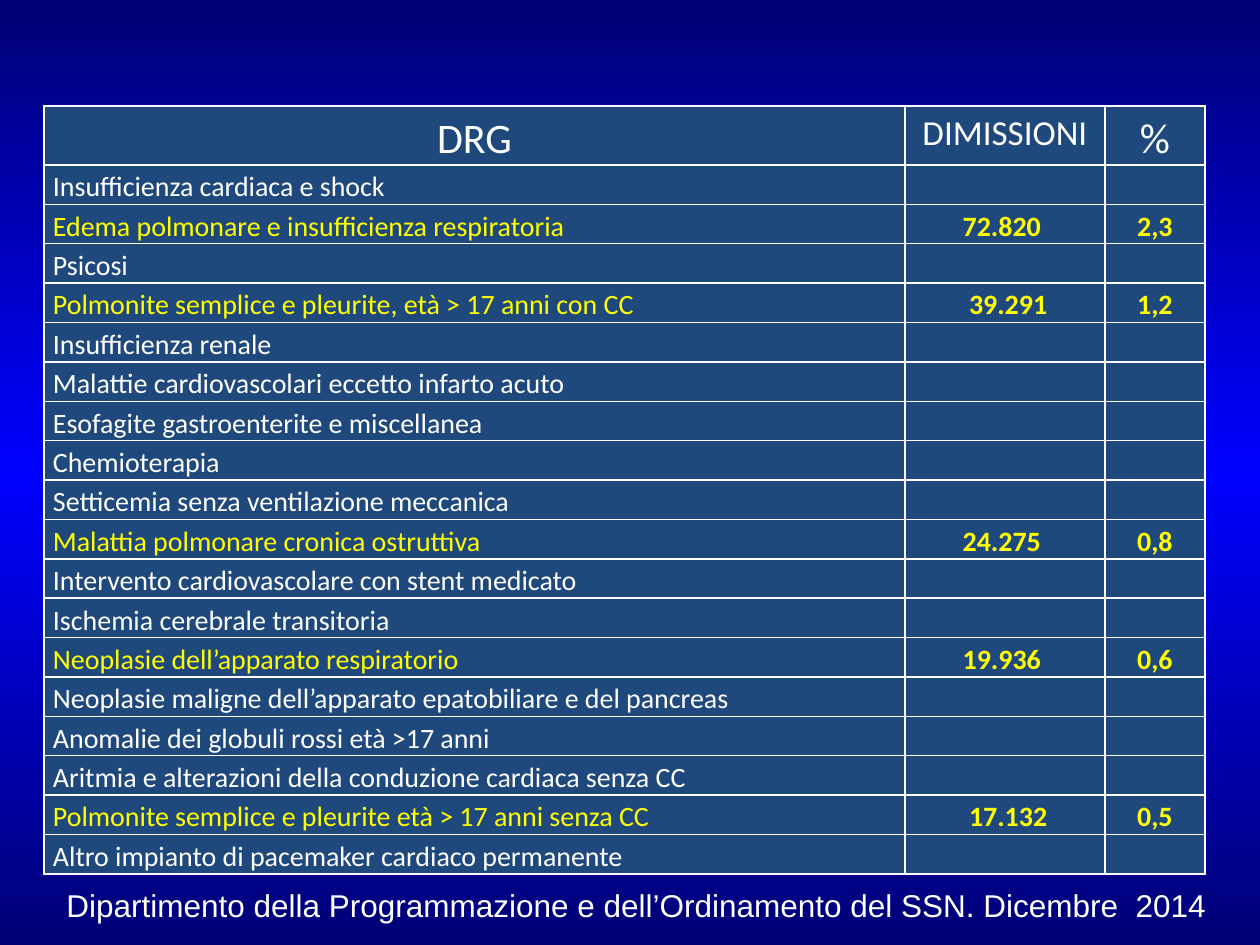
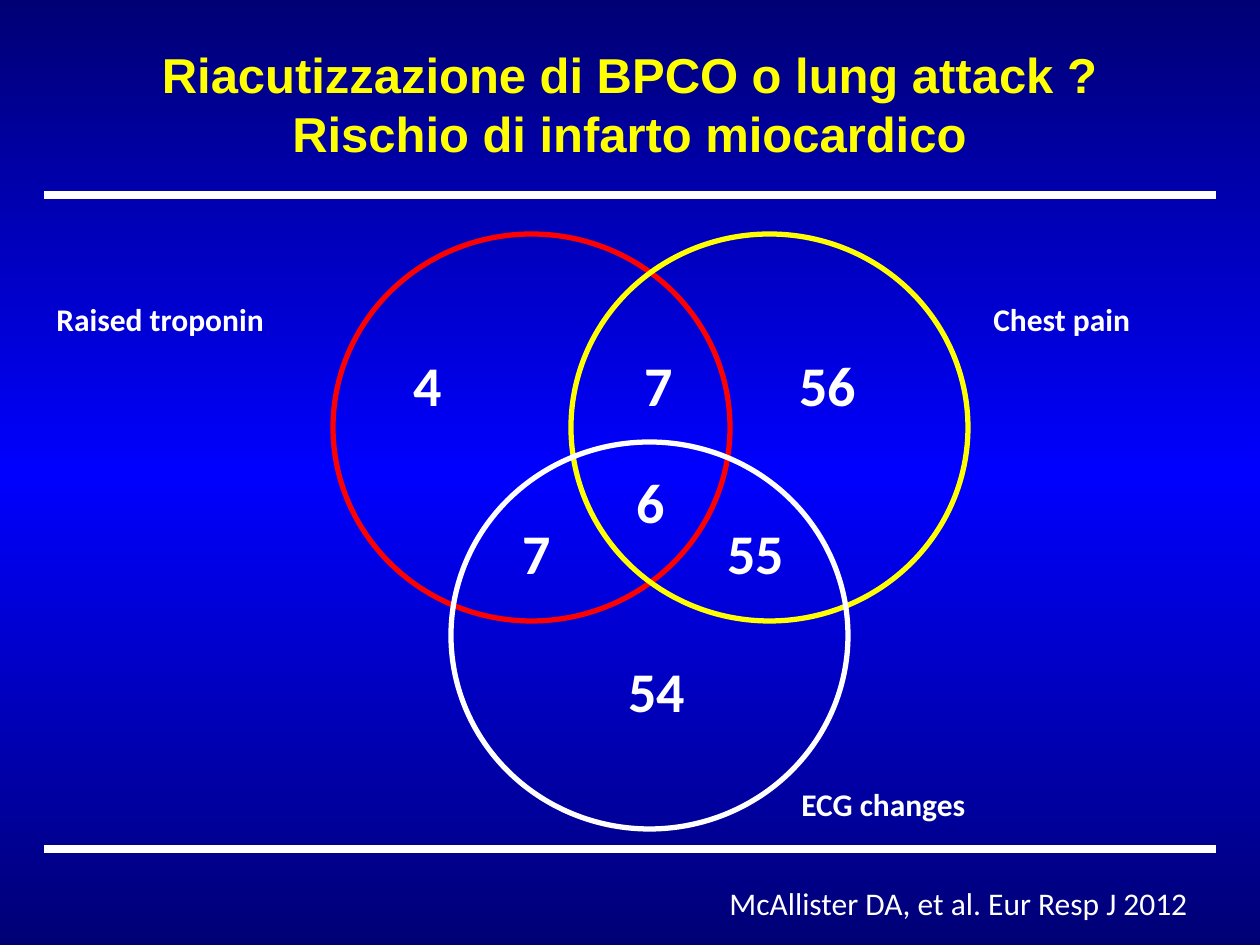
from lxml import etree
from pptx import Presentation
from pptx.dml.color import RGBColor
from pptx.enum.shapes import MSO_CONNECTOR, MSO_SHAPE
from pptx.enum.text import MSO_ANCHOR, PP_ALIGN
from pptx.oxml.ns import qn
from pptx.util import Emu, Pt

LEFT, CENTER, JUSTIFY = PP_ALIGN.LEFT, PP_ALIGN.CENTER, PP_ALIGN.JUSTIFY
MIDDLE = MSO_ANCHOR.MIDDLE
OVAL, STRAIGHT = MSO_SHAPE.OVAL, MSO_CONNECTOR.STRAIGHT
TITLE_ONLY, BLANK = 5, 6

COLORS = {
    "night": "000075",
    "blue": "0000FF",
    "cell": "1F497D",
    "white": "FFFFFF",
    "yellow": "FFFF00",
    "red": "FF0000",
}
GRADIENT = [(0, "night"), (50, "blue"), (100, "night")]

DRG_HEADINGS = [("DRG", 24), ("DIMISSIONI", 20), ("%", 24)]
DRG_ROWS = [
    ("Insufficienza cardiaca e shock",),
    ("Edema polmonare e insufficienza respiratoria", "72.820 ", "2,3"),
    ("Psicosi",),
    ("Polmonite semplice e pleurite, età > 17 anni con CC", " 39.291", "1,2"),
    ("Insufficienza renale",),
    ("Malattie cardiovascolari eccetto infarto acuto",),
    ("Esofagite gastroenterite e miscellanea",),
    ("Chemioterapia",),
    ("Setticemia senza ventilazione meccanica",),
    ("Malattia polmonare cronica ostruttiva", "24.275 ", "0,8"),
    ("Intervento cardiovascolare con stent medicato",),
    ("Ischemia cerebrale transitoria",),
    ("Neoplasie dell’apparato respiratorio", "19.936 ", "0,6"),
    ("Neoplasie maligne dell’apparato epatobiliare e del pancreas",),
    ("Anomalie dei globuli rossi età >17 anni",),
    ("Aritmia e alterazioni della conduzione cardiaca senza CC",),
    ("Polmonite semplice e pleurite età > 17 anni senza CC", " 17.132", "0,5"),
    ("Altro impianto di pacemaker cardiaco permanente",),
]
DRG_SOURCE = "Dipartimento della Programmazione e dell’Ordinamento del SSN. Dicembre  2014"

RISK_TITLE = ["Riacutizzazione di BPCO o lung attack ?", "Rischio di infarto miocardico"]
VENN_SETS = [
    ("Raised troponin", (44, 294, 234), (333, 234), "red"),
    ("Chest pain", (981, 294, 163), (571, 234), "yellow"),
    ("ECG changes", (789, 779, 190), (451, 442), "white"),
]
VENN_COUNTS = [
    ("4", 428, 384), ("7", 659, 384), ("56", 828, 384),
    ("6", 651, 501),
    ("7", 537, 552), ("55", 756, 552),
    ("54", 657, 690),
]
RISK_SOURCE = "McAllister DA, et al. Eur Resp J 2012"

SLIDE_W, SLIDE_H = 1260, 945
MARGIN = 44
COLUMN_WIDTHS = [861, 200, 100]
TABLE_TOP, HEADING_H, ROW_H = 106, 58, 39
LINE_H = 50
COUNT_W, COUNT_H = 84, 81
CIRCLE_W, CIRCLE_H = 397, 387
RULE_TOPS = [195, 849]


def px(length):
    return Emu(length * 7257)


def rgb(color):
    return RGBColor.from_string(COLORS[color])


def add_solid(parent, color):
    solid = etree.SubElement(parent, qn("a:solidFill"))
    etree.SubElement(solid, qn("a:srgbClr"), val=COLORS[color])


def paint_background(master):
    fill = master.background.fill
    fill.gradient()
    fill.gradient_angle = 270
    stops = master.element.find(".//" + qn("p:bgPr")).find(".//" + qn("a:gsLst"))
    for stop in list(stops):
        stops.remove(stop)
    for percent, color in GRADIENT:
        stop = etree.SubElement(stops, qn("a:gs"), pos=str(percent * 1000))
        etree.SubElement(stop, qn("a:srgbClr"), val=COLORS[color])


def write(paragraph, words, size, color="white", font="Calibri", bold=False, align=LEFT):
    paragraph.alignment = align
    run = paragraph.add_run()
    run.text = words
    run.font.name = font
    run.font.size = Pt(size)
    run.font.bold = bold
    run.font.color.rgb = rgb(color)


def add_label(slide, words, left, top, width, height=LINE_H, size=18, **style):
    box = slide.shapes.add_textbox(px(left), px(top), px(width), px(height))
    box.text_frame.word_wrap = False
    write(box.text_frame.paragraphs[0], words, size, **style)


def format_cell(cell):
    cell.margin_left = cell.margin_right = px(9)
    cell.margin_top = cell.margin_bottom = 0
    properties = cell._tc.get_or_add_tcPr()
    for side in ("lnL", "lnR", "lnT", "lnB"):
        border = etree.SubElement(properties, qn("a:" + side), w=str(Pt(1)))
        add_solid(border, "white")
    cell.fill.solid()
    cell.fill.fore_color.rgb = rgb("cell")


def fill_cell(cell, words, size, **style):
    paragraph = cell.text_frame.paragraphs[0]
    paragraph.line_spacing = 1.15
    write(paragraph, words, size, **style)


def build_drg_slide(prs):
    slide = prs.slides.add_slide(prs.slide_layouts[BLANK])
    table = slide.shapes.add_table(
        len(DRG_ROWS) + 1, len(COLUMN_WIDTHS), px(MARGIN), px(TABLE_TOP),
        px(sum(COLUMN_WIDTHS)), px(HEADING_H + ROW_H * len(DRG_ROWS))).table
    table.first_row = table.horz_banding = False
    for column, width in zip(table.columns, COLUMN_WIDTHS):
        column.width = px(width)
    for index, row in enumerate(table.rows):
        row.height = px(ROW_H if index else HEADING_H)
    for cell in table.iter_cells():
        format_cell(cell)
    for column, (heading, size) in enumerate(DRG_HEADINGS):
        fill_cell(table.cell(0, column), heading, size, align=CENTER)
    for row, entries in enumerate(DRG_ROWS, 1):
        color = "yellow" if len(entries) > 1 else "white"
        for column, words in enumerate(entries):
            fill_cell(table.cell(row, column), words, 16, color=color,
                      bold=column > 0, align=CENTER if column else JUSTIFY)
    add_label(slide, DRG_SOURCE, 54, 880, 1167, font="Arial")


def add_rule(slide, top):
    rule = slide.shapes.add_connector(
        STRAIGHT, px(MARGIN), px(top), px(SLIDE_W - MARGIN), px(top))
    rule.line.color.rgb = rgb("white")
    rule.line.width = Pt(4.5)
    etree.SubElement(rule._element.spPr, qn("a:effectLst"))


def add_circle(slide, left, top, color):
    circle = slide.shapes.add_shape(OVAL, px(left), px(top), px(CIRCLE_W), px(CIRCLE_H))
    circle.shadow.inherit = False
    circle.fill.background()
    circle.line.color.rgb = rgb(color)
    circle.line.width = Pt(3)


def build_risk_slide(prs):
    slide = prs.slides.add_slide(prs.slide_layouts[TITLE_ONLY])
    title = slide.shapes.title
    title.left, title.top, title.width, title.height = map(px, (MARGIN, 38, 1171, 131))
    frame = title.text_frame
    frame.vertical_anchor = MIDDLE
    for index, words in enumerate(RISK_TITLE):
        paragraph = frame.add_paragraph() if index else frame.paragraphs[0]
        write(paragraph, words, 28, "yellow", "Arial", True, CENTER)
    for top in RULE_TOPS:
        add_rule(slide, top)
    for name, label_place, circle_place, color in VENN_SETS:
        add_circle(slide, *circle_place, color)
        add_label(slide, name, *label_place, bold=True)
    for count, x, y in VENN_COUNTS:
        add_label(slide, count, x - COUNT_W // 2, y - COUNT_H // 2, COUNT_W, COUNT_H,
                  size=32, bold=True, align=CENTER)
    add_label(slide, RISK_SOURCE, 717, 878, 489)


def main():
    prs = Presentation()
    prs.slide_width, prs.slide_height = px(SLIDE_W), px(SLIDE_H)
    paint_background(prs.slide_master)
    build_drg_slide(prs)
    build_risk_slide(prs)
    prs.save("out.pptx")


if __name__ == "__main__":
    main()
